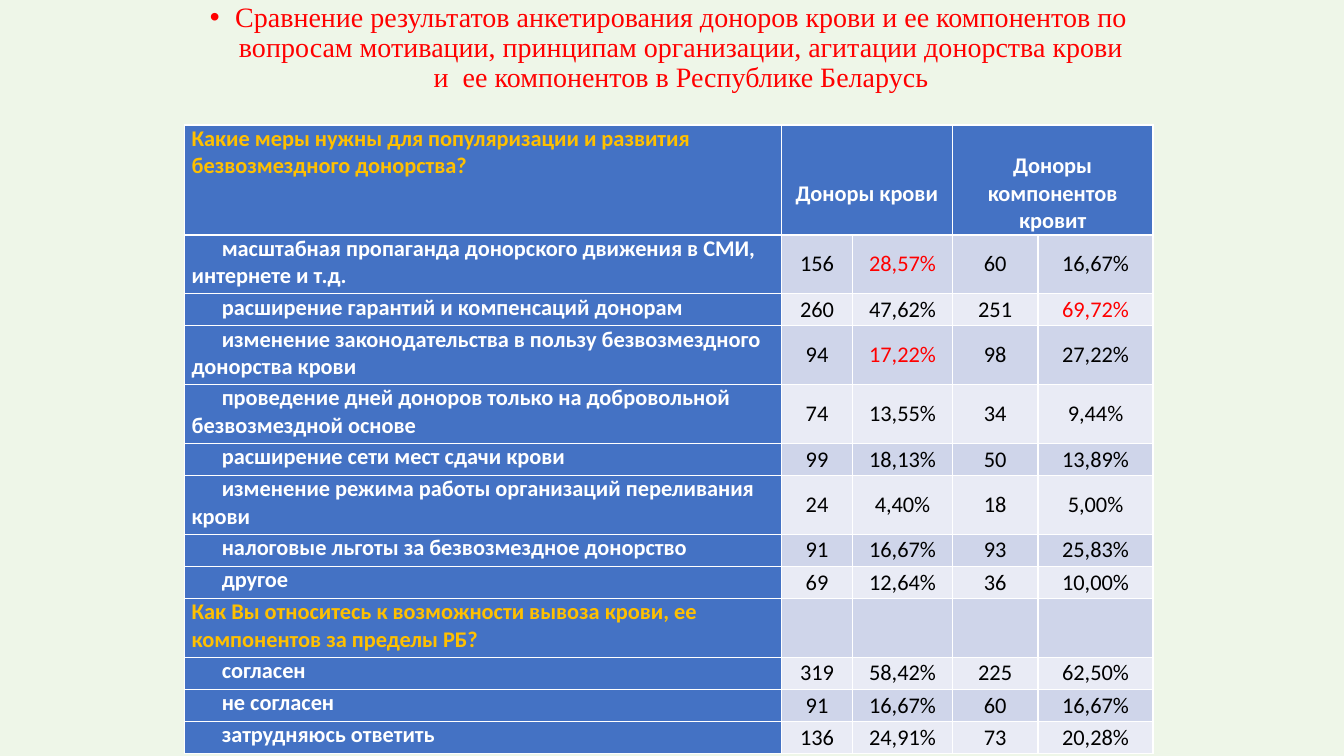
from pptx import Presentation
from pptx.dml.color import RGBColor
from pptx.enum import text
from pptx.util import Cm, Pt

COLORS = {
    "background": "EEF6E8",
    "header": "4472C4",
    "odd": "CFD5EA",
    "even": "E9EBF5",
    "white": "FFFFFF",
    "black": "000000",
    "red": "FF0000",
    "gold": "FFC000",
}
COLUMN_WIDTHS = [15.04, 1.8, 2.51, 2.16, 2.9]
HEADER_HEIGHT, TWO_LINES, ONE_LINE = 2.77, 1.48, 0.81
LONGEST_ONE_LINE = 45
HEADERS = [
    (0, "Какие меры нужны для популяризации и развития безвозмездного донорства?"),
    (1, "Доноры крови"),
    (3, "Доноры компонентов кровит"),
]
ANSWERS = [
    ("масштабная пропаганда донорского движения в СМИ, интернете и т.д.", "156", "28,57%", "60", "16,67%"),
    ("расширение гарантий и компенсаций донорам", "260", "47,62%", "251", "69,72%"),
    ("изменение законодательства в пользу безвозмездного донорства крови", "94", "17,22%", "98", "27,22%"),
    ("проведение дней доноров только на добровольной безвозмездной основе", "74", "13,55%", "34", "9,44%"),
    ("расширение сети мест сдачи крови", "99", "18,13%", "50", "13,89%"),
    ("изменение режима работы организаций переливания крови", "24", "4,40%", "18", "5,00%"),
    ("налоговые льготы за безвозмездное донорство", "91", "16,67%", "93", "25,83%"),
    ("другое", "69", "12,64%", "36", "10,00%"),
    ("Как Вы относитесь к возможности вывоза крови, ее компонентов за пределы РБ?", "", "", "", ""),
    ("согласен", "319", "58,42%", "225", "62,50%"),
    ("не согласен", "91", "16,67%", "60", "16,67%"),
    ("затрудняюсь ответить", "136", "24,91%", "73", "20,28%"),
]
HIGHLIGHTS = {"28,57%", "69,72%", "17,22%"}


def color(name):
    return RGBColor.from_string(COLORS[name])


def fill_cell(cell, wording, fill, ink, bold, centred):
    cell.fill.solid()
    cell.fill.fore_color.rgb = color(fill)
    cell.margin_left = cell.margin_right = Cm(0.18)
    cell.margin_top = cell.margin_bottom = 0
    paragraph = cell.text_frame.paragraphs[0]
    paragraph.font.size = Pt(16)
    paragraph.font.name = "Calibri"
    paragraph.font.bold = bold
    paragraph.font.color.rgb = color(ink)
    if centred:
        cell.vertical_anchor = text.MSO_ANCHOR.MIDDLE
        paragraph.alignment = text.PP_ALIGN.CENTER
    if wording:
        paragraph.add_run().text = wording
    return paragraph


presentation = Presentation()
presentation.slide_width = Cm(33.87)
presentation.slide_height = Cm(19.05)
slide = presentation.slides.add_slide(presentation.slide_layouts[1])
slide.background.fill.solid()
slide.background.fill.fore_color.rgb = color("background")
unused_title = slide.shapes.title._element
unused_title.getparent().remove(unused_title)

topic = slide.placeholders[1]
topic.left, topic.top, topic.width, topic.height = Cm(4.93), Cm(-0.05), Cm(23.83), Cm(16.79)
topic.text_frame.text = (
    "Сравнение результатов анкетирования доноров крови и ее компонентов по вопросам "
    "мотивации, принципам организации, агитации донорства крови и  ее компонентов "
    "в Республике Беларусь"
)
heading = topic.text_frame.paragraphs[0]
heading.alignment = text.PP_ALIGN.CENTER
heading.line_spacing = 0.9
heading.space_before = Pt(10)
heading.font.size = Pt(20)
heading.font.name = "Times New Roman"
heading.font.color.rgb = color("red")
heading_properties = heading._p.get_or_add_pPr()
heading_properties.set("marL", str(Cm(0.64)))
heading_properties.set("indent", str(Cm(-0.64)))

survey = slide.shapes.add_table(
    len(ANSWERS) + 1, len(COLUMN_WIDTHS), Cm(4.65), Cm(3.15), Cm(sum(COLUMN_WIDTHS)), Cm(15.84)
).table
survey.first_col = True
for column, width in zip(survey.columns, COLUMN_WIDTHS):
    column.width = Cm(width)

survey.rows[0].height = Cm(HEADER_HEIGHT)
for position, wording in HEADERS:
    header = survey.cell(0, position)
    is_group = position > 0
    fill_cell(header, wording, "header", "white" if is_group else "gold", True, is_group)
    if is_group:
        header.margin_top = Cm(0.69)
        header.merge(survey.cell(0, position + 1))

for number, (answer, *results) in enumerate(ANSWERS, start=1):
    survey.rows[number].height = Cm(TWO_LINES if len(answer) > LONGEST_ONE_LINE else ONE_LINE)
    is_question = not any(results)
    label = fill_cell(
        survey.cell(number, 0), answer, "header", "gold" if is_question else "white", True, False
    )
    if not is_question:
        label._p.get_or_add_pPr().set("indent", str(Cm(0.76)))
    band = "odd" if number % 2 else "even"
    for position, result in enumerate(results, start=1):
        ink = "red" if result in HIGHLIGHTS else "black"
        fill_cell(survey.cell(number, position), result, band, ink, False, True)

presentation.save("out.pptx")
